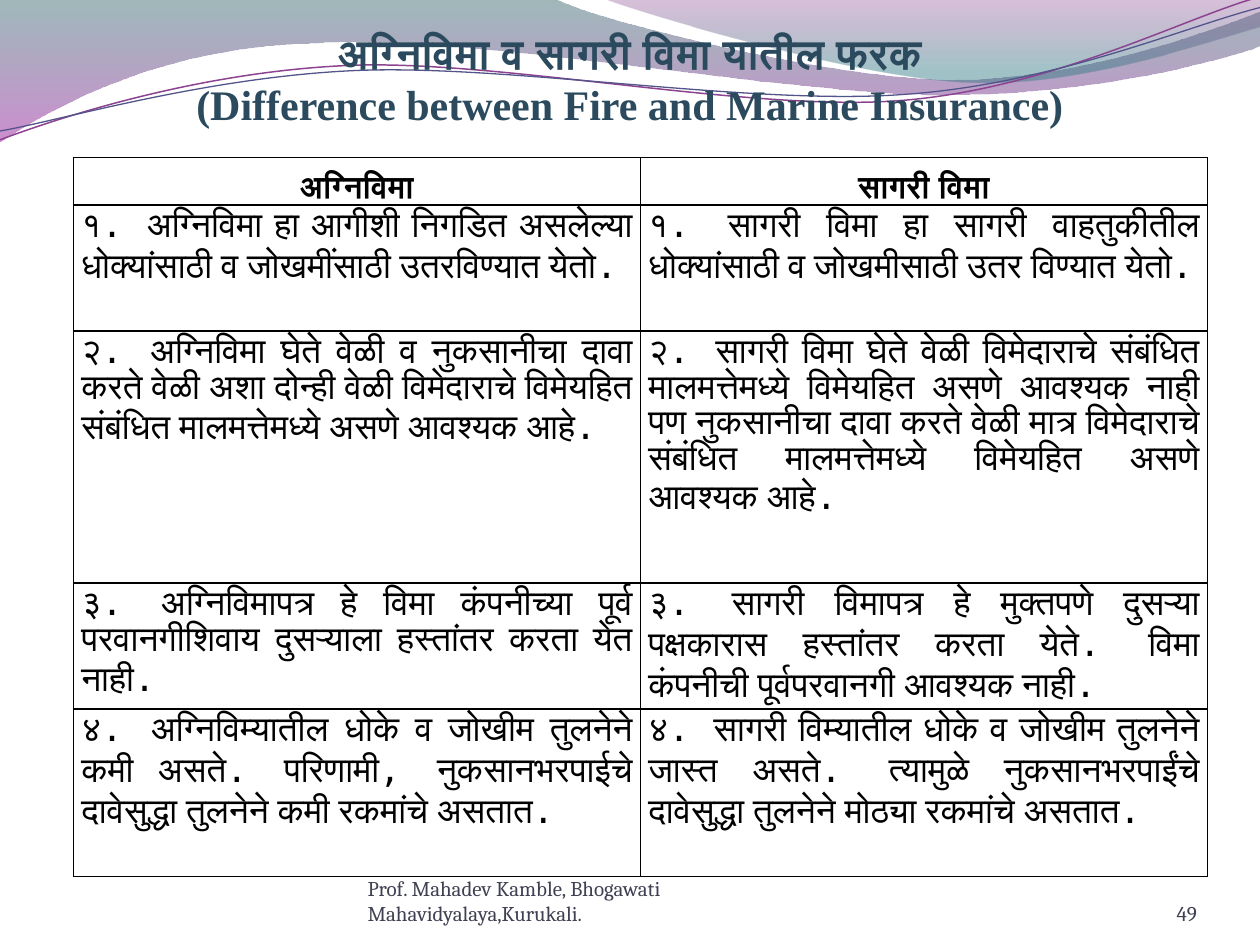
"""Build a slide that compares fire insurance with marine insurance."""
from dataclasses import dataclass
from itertools import chain

from lxml.etree import SubElement
from pptx import Presentation
from pptx.dml.color import RGBColor as Rgb
from pptx.enum.text import MSO_ANCHOR as Anchor, MSO_AUTO_SIZE as AutoSize, PP_ALIGN as Align
from pptx.oxml.ns import qn
from pptx.util import Cm, Pt


@dataclass(frozen=True)
class Theme:
    """Colours, fonts and type sizes of the slide."""
    heading: str = "2B4A5E"
    ink: str = "000000"
    muted: str = "3F4152"
    plum: str = "8D4490"
    indigo: str = "53548A"
    wide_band: tuple = ((0, "2D6368", 45), (1, "A530A9", 55))
    right_band: tuple = ((0, "7F2F82", 30), (0.8, "2F7B82", 45))
    marathi: str = "DejaVu Sans Mono"
    english: str = "Times New Roman"
    small: str = "Cambria"
    title_size: int = 24
    header_size: int = 18
    body_size: int = 20
    footer_size: int = 12


WIDE_BAND = [
    [(0, 0)], [(4.4, -0.01)],
    [(4.76, 0.17), (6.64, 0.63), (7.58, 0.63)],
    [(8.53, 0.63), (9.58, 0.26), (10, 0.09)],
    [(10.01, 0.36)],
    [(9.83, 0.44), (8.7, 0.76), (7.46, 0.75)],
    [(6.22, 0.75), (3.82, 0.28), (2.57, 0.34)],
    [(1.29, 0.36), (0.46, 0.83), (-0.01, 1.13)],
]
RIGHT_BAND = [
    [(4.79, -0.01)],
    [(5.09, 0.11), (6.82, 0.62), (7.69, 0.65)],
    [(8.56, 0.69), (9.61, 0.32), (10, 0.21)],
    [(10, 0)],
]
PLUM_WAVE = [
    [(0, 1.11)],
    [(0.48, 0.93), (1.58, 0.57), (2.77, 0.52)],
    [(3.95, 0.47), (5.93, 0.89), (7.13, 0.8)],
    [(8.33, 0.71), (9.38, 0.15), (9.98, -0.02)],
]
INDIGO_WAVE = [
    [(0, 1.04)],
    [(0.47, 0.96), (1.64, 0.61), (2.83, 0.56)],
    [(4.03, 0.51), (5.97, 0.84), (7.17, 0.75)],
    [(8.36, 0.67), (9.41, 0.21), (10, 0.06)],
]

TITLE = "अग्निविमा व सागरी विमा यातील फरक\n(Difference between Fire and Marine Insurance)"
COMPARISON = [
    ("अग्निविमा", "सागरी विमा"),
    ("१. अग्निविमा हा आगीशी निगडित असलेल्या धोक्यांसाठी व जोखमींसाठी उतरविण्यात येतो.",
     "१. सागरी विमा हा सागरी वाहतुकीतील धोक्यांसाठी व जोखमीसाठी उतर विण्यात येतो."),
    ("२. अग्निविमा घेते वेळी व नुकसानीचा दावा करते वेळी अशा दोन्ही वेळी विमेदाराचे "
     "विमेयहित संबंधित मालमत्तेमध्ये असणे आवश्यक आहे.",
     "२. सागरी विमा घेते वेळी विमेदाराचे संबंधित मालमत्तेमध्ये विमेयहित असणे आवश्यक नाही "
     "पण नुकसानीचा दावा करते वेळी मात्र विमेदाराचे संबंधित मालमत्तेमध्ये विमेयहित असणे आवश्यक आहे."),
    ("३. अग्निविमापत्र हे विमा कंपनीच्या पूर्व परवानगीशिवाय दुसऱ्याला हस्तांतर करता येत नाही.",
     "३. सागरी विमापत्र हे मुक्तपणे दुसऱ्या पक्षकारास हस्तांतर करता येते. "
     "विमा कंपनीची पूर्वपरवानगी आवश्यक नाही."),
    ("४. अग्निविम्यातील धोके व जोखीम तुलनेने कमी असते. परिणामी, नुकसानभरपाईचे "
     "दावेसुद्धा तुलनेने कमी रकमांचे असतात.",
     "४. सागरी विम्यातील धोके व जोखीम तुलनेने जास्त असते. त्यामुळे नुकसानभरपाईंचे "
     "दावेसुद्धा तुलनेने मोठ्या रकमांचे असतात."),
]
ROW_HEIGHTS = (0.84, 2.54, 5.08, 2.54, 3.38)


class SlideBuilder:
    """Hold the theme and the current slide, and add its elements."""

    def __init__(self, slide, theme):
        self.slide = slide
        self.theme = theme

    def style(self, paragraph, font, size, colour, align, bold=False):
        paragraph.alignment = align
        for run in paragraph.runs:
            run.font.name = font
            run.font.size = Pt(size)
            run.font.bold = bold
            run.font.color.rgb = Rgb.from_string(colour)

    def outline(self, segments, closed):
        start, *rest = [(Cm(x * 2.54), Cm(y * 2.54)) for x, y in chain(*segments)]
        builder = self.slide.shapes.build_freeform(*start, scale=1.0)
        builder.add_line_segments(rest, close=closed)
        outline = builder.convert_to_shape()
        outline.shadow.inherit = False
        lines = iter(list(outline.element.iter(qn("a:lnTo"))))
        for segment in segments[1:]:
            first, *others = [next(lines) for _ in segment]
            if others:
                first.tag = qn("a:cubicBezTo")
            for other in others:
                first.append(other[0])
                other.getparent().remove(other)
        return outline

    def band(self, segments, stops):
        band = self.outline(segments, True)
        band.line.fill.background()
        band.fill.gradient()
        band.fill.gradient_angle = 270
        for stop, (position, colour, _) in zip(band.fill.gradient_stops, stops):
            stop.position = position
            stop.color.rgb = Rgb.from_string(colour)
        for colour, (_, _, opacity) in zip(band.element.iter(qn("a:srgbClr")), stops):
            SubElement(colour, qn("a:alpha"), val=str(opacity * 1000))

    def wave(self, segments, colour, width):
        wave = self.outline(segments, False)
        wave.fill.background()
        wave.line.color.rgb = Rgb.from_string(colour)
        wave.line.width = Pt(width)

    def title(self, text, left, top, width, height):
        title = self.slide.shapes.title
        title.left, title.top, title.width, title.height = map(Cm, (left, top, width, height))
        frame = title.text_frame
        frame.text = text
        frame.auto_size = AutoSize.SHAPE_TO_FIT_TEXT
        frame.vertical_anchor = Anchor.MIDDLE
        for paragraph, font in zip(frame.paragraphs, (self.theme.marathi, self.theme.english)):
            self.style(paragraph, font, self.theme.title_size, self.theme.heading,
                       Align.CENTER, True)
        self.slide.shapes.element.append(title.element)

    def border(self, cell):
        properties = cell._tc.get_or_add_tcPr()
        for side in ("lnL", "lnR", "lnT", "lnB"):
            edge = SubElement(properties, qn(f"a:{side}"), w=str(Pt(1)))
            fill = SubElement(edge, qn("a:solidFill"))
            SubElement(fill, qn("a:srgbClr"), val=self.theme.ink)

    def table(self, rows, heights, left, top, column_width):
        columns = len(rows[0])
        table = self.slide.shapes.add_table(
            len(rows), columns, Cm(left), Cm(top),
            Cm(column_width * columns), Cm(sum(heights))).table
        table.first_row = table.horz_banding = False
        for r, (row, height) in enumerate(zip(rows, heights)):
            table.rows[r].height = Cm(height)
            header = r == 0
            for c, text in enumerate(row):
                cell = table.cell(r, c)
                cell.margin_left = cell.margin_right = Cm(0.16)
                cell.margin_top = cell.margin_bottom = 0
                self.border(cell)
                cell.fill.background()
                cell.text_frame.text = text
                paragraph = cell.text_frame.paragraphs[0]
                if header:
                    paragraph.line_spacing = 1.5
                size = self.theme.header_size if header else self.theme.body_size
                self.style(paragraph, self.theme.marathi, size, self.theme.ink,
                           Align.CENTER if header else Align.JUSTIFY, header)

    def footer(self, text, left, width, align):
        frame = self.slide.shapes.add_textbox(
            Cm(left), Cm(17.65), Cm(width), Cm(1.02)).text_frame
        frame.word_wrap = True
        frame.vertical_anchor = Anchor.BOTTOM
        frame.margin_left = frame.margin_right = frame.margin_top = frame.margin_bottom = 0
        frame.text = text
        self.style(frame.paragraphs[0], self.theme.small, self.theme.footer_size,
                   self.theme.muted, align)


def main():
    deck = Presentation()
    deck.slide_width, deck.slide_height = Cm(25.4), Cm(19.05)
    theme = Theme()
    page = SlideBuilder(deck.slides.add_slide(deck.slide_layouts[5]), theme)
    page.band(WIDE_BAND, theme.wide_band)
    page.band(RIGHT_BAND, theme.right_band)
    page.wave(PLUM_WAVE, theme.plum, 0.85)
    page.wave(INDIGO_WAVE, theme.indigo, 0.75)
    page.table(COMPARISON, ROW_HEIGHTS, 1.48, 3.18, 11.43)
    page.title(TITLE, 0.85, 0.42, 23.7, 2.31)
    page.footer("Prof. Mahadev Kamble, Bhogawati Mahavidyalaya,Kurukali.", 7.41, 9.31, Align.LEFT)
    page.footer("49", 22.01, 2.12, Align.RIGHT)
    deck.save("out.pptx")


if __name__ == "__main__":
    main()
